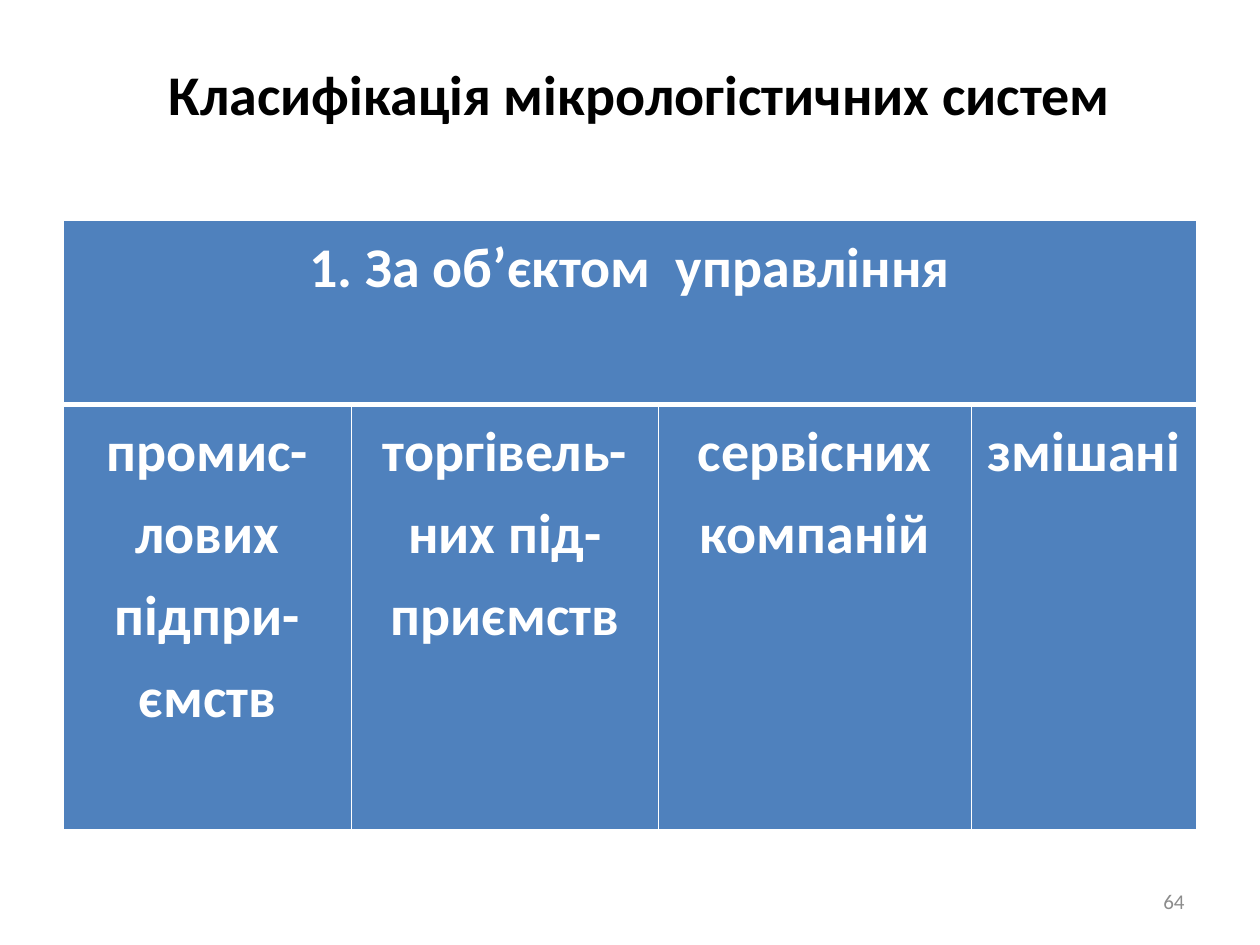
from pptx import Presentation
from pptx.dml.color import RGBColor
from pptx.enum.text import MSO_ANCHOR, PP_ALIGN
from pptx.oxml.ns import qn
from pptx.util import Cm, Pt
from lxml import etree

CENTER, RIGHT = PP_ALIGN.CENTER, PP_ALIGN.RIGHT
MIDDLE = MSO_ANCHOR.MIDDLE

TITLE = "Класифікація мікрологістичних систем"
HEADING = "1. За об’єктом  управління"
KINDS = ["промис-лових підпри-ємств", "торгівель-них під-приємств",
         "сервісних компаній", "змішані"]
PAGE_NUMBER = "64"

COLORS = {"title": "000000", "cell": "4F81BD", "light": "FFFFFF", "number": "8C8C8C"}
FONT = "Calibri"
COLUMN_WIDTHS = [5.82, 6.18, 6.31, 4.55]
ROW_HEIGHTS = [3.7, 8.58]
THIN, THICK = 1, 3


def write(frame, text, size, color, align, bold=False):
    frame.word_wrap = True
    para = frame.paragraphs[0]
    para.text = text
    para.alignment = align
    para.font.name = FONT
    para.font.size = Pt(size)
    para.font.bold = bold
    para.font.color.rgb = RGBColor.from_string(COLORS[color])
    return para


def set_borders(cell, widths):
    properties = cell._tc.get_or_add_tcPr()
    for index, (side, width) in enumerate(widths.items()):
        line = etree.Element(qn(f"a:ln{side}"), w=str(Pt(width)))
        fill = etree.SubElement(line, qn("a:solidFill"))
        etree.SubElement(fill, qn("a:srgbClr"), val=COLORS["light"])
        properties.insert(index, line)


def format_cell(cell, top, bottom):
    cell.fill.solid()
    cell.fill.fore_color.rgb = RGBColor.from_string(COLORS["cell"])
    cell.margin_left = cell.margin_right = Cm(0.18)
    cell.margin_top = cell.margin_bottom = 0
    set_borders(cell, {"L": THIN, "R": THIN, "T": top, "B": bottom})


def fill_cell(cell, text):
    write(cell.text_frame, text, 32, "light", CENTER, True).line_spacing = 1.2


deck = Presentation()
deck.slide_width, deck.slide_height = Cm(25.4), Cm(19.05)
page = deck.slides.add_slide(deck.slide_layouts[5])

title = page.shapes.title
title.left, title.top, title.width, title.height = Cm(1.47), Cm(1.07), Cm(22.86), Cm(1.63)
title.text_frame.vertical_anchor = MIDDLE
write(title.text_frame, TITLE, 32, "title", CENTER, True)

table = page.shapes.add_table(
    len(ROW_HEIGHTS), len(KINDS), Cm(1.27), Cm(4.45),
    Cm(sum(COLUMN_WIDTHS)), Cm(sum(ROW_HEIGHTS))).table
for column, width in zip(table.columns, COLUMN_WIDTHS):
    column.width = Cm(width)
for row, height in zip(table.rows, ROW_HEIGHTS):
    row.height = Cm(height)

for index, kind in enumerate(KINDS):
    format_cell(table.cell(0, index), THIN, THICK)
    format_cell(table.cell(1, index), THICK, THIN)
    fill_cell(table.cell(1, index), kind)
table.cell(0, 0).merge(table.cell(0, len(KINDS) - 1))
fill_cell(table.cell(0, 0), HEADING)

number = page.shapes.add_textbox(Cm(18.2), Cm(17.65), Cm(5.93), Cm(1.02))
number.text_frame.vertical_anchor = MIDDLE
write(number.text_frame, PAGE_NUMBER, 12, "number", RIGHT)

deck.save("out.pptx")
